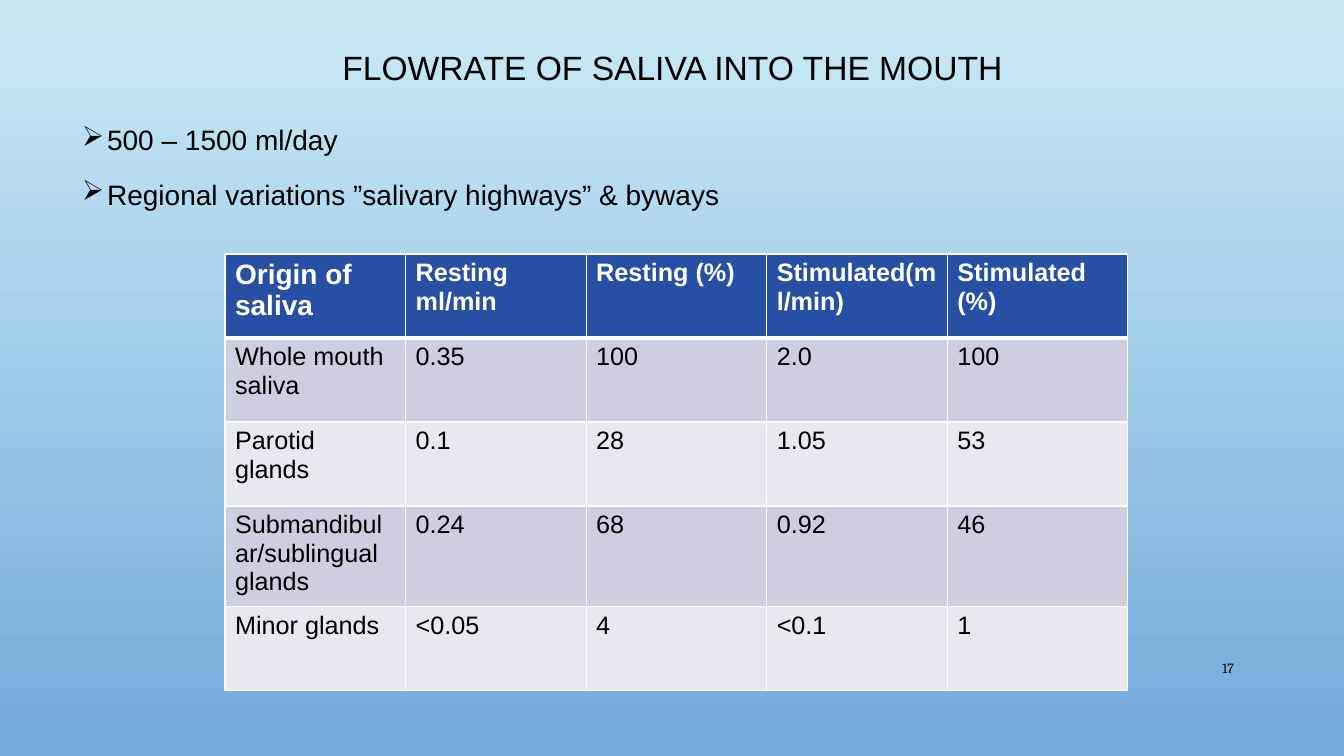
from lxml import etree
from pptx import Presentation
from pptx.dml.color import RGBColor
from pptx.enum import text
from pptx.oxml import ns
from pptx.util import Pt

PX = 914400 / 100.8  # EMU in one px
BLACK, WHITE, HEADER = "000000", "FFFFFF", "274FA4"
BANDS = ("CBCFE0", "E7E8F0")
SKY = ("CAEBF5", "72AADB")
ROW_HEIGHTS = (84, 84, 84, 101, 84)
FLOWRATES = (
    ("Origin of saliva", "Resting ml/min", "Resting (%)", "Stimulated(ml/min)", "Stimulated (%)"),
    ("Whole mouth saliva", "0.35", "100", "2.0", "100"),
    ("Parotid glands", "0.1", "28", "1.05", "53"),
    ("Submandibular/sublingual glands", "0.24", "68", "0.92", "46"),
    ("Minor glands", "<0.05", "4", "<0.1", "1"),
)


def px(length):
    return round(length * PX)


def rgb(colour):
    return RGBColor.from_string(colour)


def assign(target, values):
    for name, value in values.items():
        setattr(target, name, value)


def element(parent, tag, **attributes):
    return etree.SubElement(parent, ns.qn(tag), attributes)


class SlideBuilder:
    font = "Arial"

    def __init__(self, deck):
        self.page = deck.slides.add_slide(deck.slide_layouts[1])

    def background(self, colours):
        fill = self.page.background.fill
        fill.gradient()
        fill.gradient_angle = 270
        for stop, colour in zip(fill.gradient_stops, colours):
            stop.color.rgb = rgb(colour)

    def place(self, shape, left, top, width, height):
        assign(shape, dict(left=px(left), top=px(top), width=px(width), height=px(height)))

    def add_words(self, para, words, size, colour=BLACK, bold=False, font=None, **layout):
        assign(para, layout)
        span = para.add_run()
        span.text = words
        assign(span.font, dict(size=Pt(size), name=font or self.font, bold=bold))
        span.font.color.rgb = rgb(colour)

    def frame(self, shape, anchor):
        assign(shape.text_frame, dict(word_wrap=True, vertical_anchor=anchor,
                                      auto_size=text.MSO_AUTO_SIZE.NONE))
        return shape.text_frame

    def title(self, words, *place):
        shape = self.page.shapes.title
        self.place(shape, *place)
        para = self.frame(shape, text.MSO_ANCHOR.MIDDLE).paragraphs[0]
        self.add_words(para, words, 24, alignment=text.PP_ALIGN.CENTER, line_spacing=0.9)

    def bullets(self, items, *place):
        shape = self.page.placeholders[1]
        self.place(shape, *place)
        frame = self.frame(shape, text.MSO_ANCHOR.TOP)
        for index, words in enumerate(items):
            para = frame.add_paragraph() if index else frame.paragraphs[0]
            props = para._p.get_or_add_pPr()
            props.set("marL", str(px(25)))
            props.set("indent", str(px(-25)))
            element(element(props, "a:buClr"), "a:srgbClr", val=BLACK)
            element(props, "a:buFont", typeface="Wingdings")
            element(props, "a:buChar", char="Ø")
            self.add_words(para, words, 20, line_spacing=1.2,
                           space_before=Pt(10 if index else 0))

    def label(self, words, *place):
        box = self.page.shapes.add_textbox(*map(px, place))
        para = self.frame(box, text.MSO_ANCHOR.MIDDLE).paragraphs[0]
        self.add_words(para, words, 10, font="Cambria", alignment=text.PP_ALIGN.RIGHT)

    def borders(self, cell, row):
        props = cell._tc.get_or_add_tcPr()
        thick = {0: "a:lnB", 1: "a:lnT"}.get(row)  # rule under the header
        for side in ("a:lnL", "a:lnR", "a:lnT", "a:lnB"):
            line = element(props, side, w=str(Pt(3 if side == thick else 1)))
            element(element(line, "a:solidFill"), "a:srgbClr", val=WHITE)

    def table(self, rows, heights, left, top, width):
        place = map(px, (left, top, width, sum(heights)))
        table = self.page.shapes.add_table(len(rows), len(rows[0]), *place).table
        for row, (values, height) in enumerate(zip(rows, heights)):
            table.rows[row].height = px(height)
            for column, words in enumerate(values):
                cell = table.cell(row, column)
                self.borders(cell, row)
                cell.fill.solid()
                cell.fill.fore_color.rgb = rgb(BANDS[(row - 1) % 2] if row else HEADER)
                self.add_words(cell.text_frame.paragraphs[0], words,
                               18 if row or column else 20,
                               BLACK if row else WHITE, bold=not row)


def main():
    deck = Presentation()
    assign(deck, dict(slide_width=px(1344), slide_height=px(756)))
    slide = SlideBuilder(deck)
    slide.background(SKY)

    # Heading and key points
    slide.title("FLOWRATE OF SALIVA INTO THE MOUTH", 93, 40, 1159, 59)
    slide.bullets(("500 – 1500 ml/day", "Regional variations ”salivary highways” & byways"),
                  72, 111, 1179, 571)

    # Page number
    slide.label("17", 1159, 648, 85, 40)

    # Flow rates by gland
    slide.table(FLOWRATES, ROW_HEIGHTS, 225, 254, 903)
    deck.save("out.pptx")


if __name__ == "__main__":
    main()
